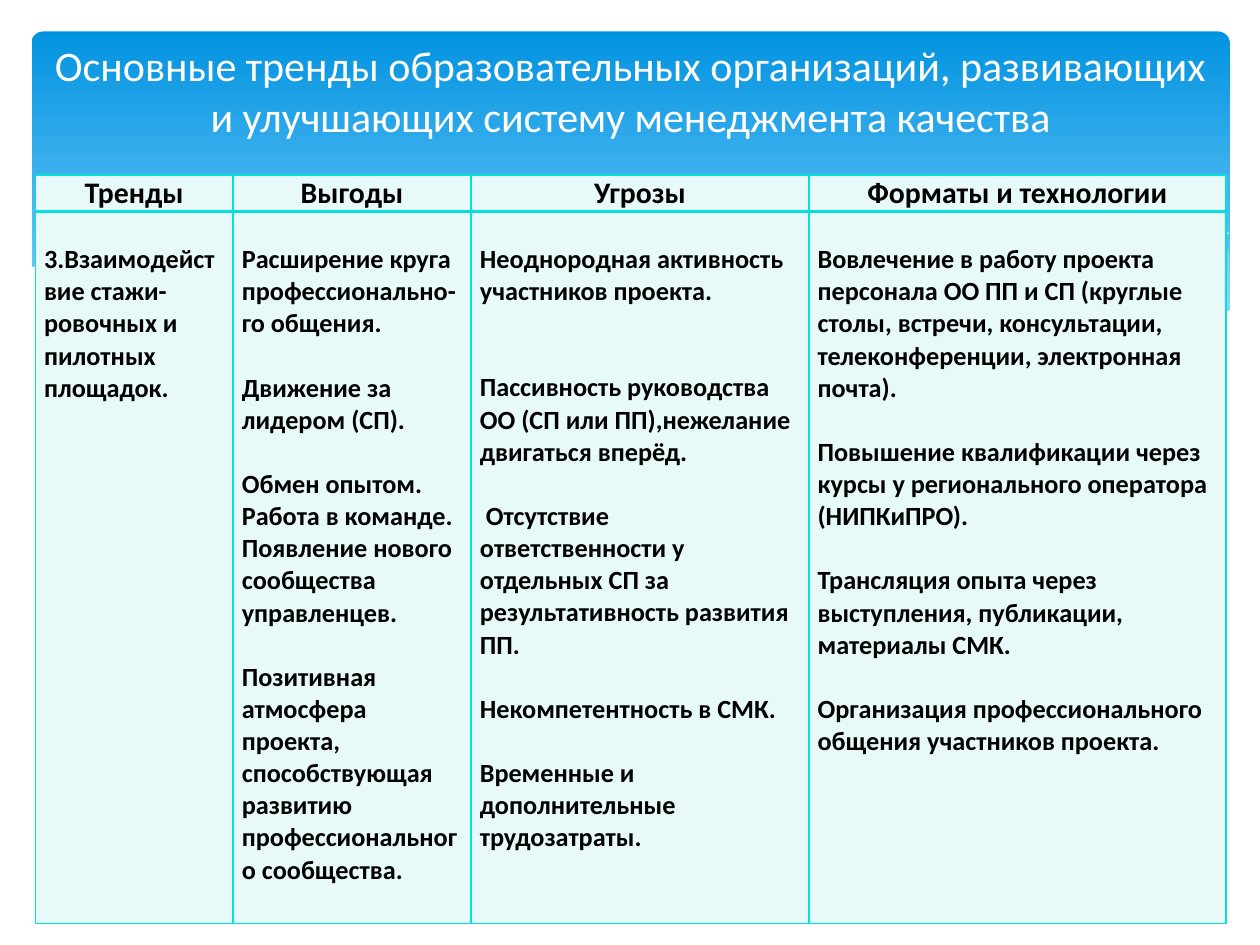
from dataclasses import dataclass

from lxml.etree import SubElement
from pptx import Presentation
from pptx.dml.color import RGBColor
from pptx.enum.shapes import MSO_SHAPE
from pptx.enum.text import MSO_ANCHOR, MSO_AUTO_SIZE, PP_ALIGN
from pptx.oxml import parse_xml
from pptx.oxml.ns import nsdecls, qn
from pptx.util import Inches, Pt


@dataclass(frozen=True)
class Theme:
    font: str = "Calibri"
    white: str = "FFFFFF"
    text: str = "000000"
    band_top: str = "0293E0"
    band_bottom: str = "83D3FE"
    wave: str = "C6E7FC"
    cell: str = "E7F9F8"
    border: str = "05E0DB"
    title_size: int = 24
    header_size: int = 17
    body_size: int = 15
    line_height: float = 18.3  # one body line, in points


THEME = Theme()

TITLE = ("Основные тренды образовательных организаций, развивающих "
         "и улучшающих систему менеджмента качества")
COL_WIDTHS = [1.57, 1.89, 2.68, 3.31]
ROW_HEIGHTS = [0.29, 5.65]
HEADERS = ["Тренды", "Выгоды", "Угрозы", "Форматы и технологии"]
# Each paragraph: free lines above it, text
BODY = [
    [(0, "3.Взаимодействие стажи-ровочных и пилотных площадок.")],
    [(0, "Расширение круга профессионально-"),
     (0, "го общения."),
     (1, "Движение за лидером (СП)."),
     (1, "Обмен опытом."),
     (0, "Работа в команде."),
     (0, "Появление нового сообщества управленцев."),
     (1, "Позитивная атмосфера проекта, способствующая развитию "
         "профессионального сообщества.")],
    [(0, "Неоднородная активность участников проекта."),
     (2, "Пассивность руководства ОО (СП или ПП),нежелание двигаться вперёд."),
     (1, " Отсутствие ответственности у отдельных СП за результативность "
         "развития ПП."),
     (1, "Некомпетентность в СМК."),
     (1, "Временные и дополнительные трудозатраты.")],
    [(0, "Вовлечение в работу проекта персонала ОО ПП и СП (круглые столы, "
         "встречи, консультации, телеконференции, электронная почта)."),
     (1, "Повышение квалификации через курсы у регионального оператора "
         "(НИПКиПРО)."),
     (1, "Трансляция опыта через выступления, публикации, материалы СМК."),
     (1, "Организация профессионального общения участников проекта.")],
]

# Wave outlines, in inches from the corner of the wave box
SMALL_WAVE = [(9.53, 0.16), (8.98, 0.26), (8.38, 0.39), (7.3, 0.64), (6.38, 0.81),
              (6.82, 0.87), (7.34, 0.92), (7.91, 0.94), (8.4, 0.91), (8.9, 0.83),
              (9.26, 0.73), (9.53, 0.63)]
WIDE_WAVE = [(8.7, 0.89), (7.84, 0.76), (6.83, 0.56), (6.06, 0.38), (5.46, 0.24),
             (4.91, 0.14), (4.19, 0.05), (3.38, 0.01), (2.63, 0.07), (3.39, 0.19),
             (4.26, 0.38), (5.07, 0.56), (5.95, 0.74), (6.72, 0.86), (7.5, 0.93),
             (8.05, 0.94)]
FALLING_LINE = [(2.86, 0.11), (3.4, 0.05), (4.1, 0.03), (4.87, 0.08), (5.59, 0.16),
                (6.42, 0.29), (7.37, 0.49), (8.08, 0.67), (8.84, 0.88)]
RISING_LINE = [(5.9, 0.73), (6.97, 0.45), (7.83, 0.26), (8.72, 0.1), (9.52, 0.01)]
WHITE_EDGE = [(9.54, 0.62), (9.07, 0.78), (8.52, 0.89), (7.86, 0.93), (7.03, 0.88),
              (6.03, 0.74), (5.06, 0.55), (4.24, 0.36), (3.42, 0.18), (2.69, 0.06),
              (2.07, 0.01), (1.54, 0), (0.96, 0.03), (0.44, 0.13), (0, 0.29),
              (0, 1.45), (9.54, 1.45)]


def rgb(color):
    return RGBColor.from_string(color)


def add_run(p, text, size, color, bold=False):
    r = p.add_run()
    r.text = text
    r.font.name = THEME.font
    r.font.size = Pt(size)
    r.font.bold = bold
    r.font.color.rgb = rgb(color)


def add_band(s, left, top, width, height):
    """Blue rounded panel behind the title."""
    sp = s.shapes.add_shape(MSO_SHAPE.ROUNDED_RECTANGLE, Inches(left), Inches(top),
                            Inches(width), Inches(height))
    sp.adjustments[0] = 0.034
    sp.shadow.inherit = False
    sp.line.fill.background()
    sp.fill.gradient()
    sp.fill.gradient_angle = 270
    stops = zip(sp.fill.gradient_stops, (0, 0.9), (THEME.band_top, THEME.band_bottom))
    for stop, position, color in stops:
        stop.position = position
        stop.color.rgb = rgb(color)


def add_outline(s, left, top, points, fill=None, opacity=100):
    """Filled wave, or a thin white line when no fill is given."""
    pts = [(Inches(left + x), Inches(top + y)) for x, y in points]
    builder = s.shapes.build_freeform(*pts[0])
    builder.add_line_segments(pts[1:], close=fill is not None)
    sp = builder.convert_to_shape()
    sp.shadow.inherit = False
    if fill is None:
        sp.fill.background()
        sp.line.color.rgb = rgb(THEME.white)
        sp.line.width = Pt(0)
        return
    sp.line.fill.background()
    sp.fill.solid()
    sp.fill.fore_color.rgb = rgb(fill)
    if opacity < 100:
        color = sp.fill._xPr.find(".//" + qn("a:srgbClr"))
        SubElement(color, qn("a:alpha"), val=str(opacity * 1000))


def add_waves(s, left, top):
    add_outline(s, left, top, SMALL_WAVE, THEME.wave, 29)
    add_outline(s, left, top, WIDE_WAVE, THEME.wave, 40)
    add_outline(s, left, top, FALLING_LINE)
    add_outline(s, left, top, RISING_LINE)
    add_outline(s, left, top, WHITE_EDGE, THEME.white)


def style_cell(cell, top_width, bottom_width):
    cell.margin_left = cell.margin_right = Inches(0.07)
    cell.margin_top = cell.margin_bottom = 0
    cell.fill.solid()
    cell.fill.fore_color.rgb = rgb(THEME.cell)
    sides = [("L", 1), ("R", 1), ("T", top_width), ("B", bottom_width)]
    for i, (side, width) in enumerate(sides):
        cell._tc.get_or_add_tcPr().insert(i, parse_xml(
            f'<a:ln{side} {nsdecls("a")} w="{Pt(width)}"><a:solidFill>'
            f'<a:srgbClr val="{THEME.border}"/></a:solidFill></a:ln{side}>'))


def add_trend_table(s, left, top):
    table = s.shapes.add_table(2, len(HEADERS), Inches(left), Inches(top),
                               Inches(sum(COL_WIDTHS)), Inches(sum(ROW_HEIGHTS))).table
    table.first_row = table.horz_banding = False
    for row, height in zip(table.rows, ROW_HEIGHTS):
        row.height = Inches(height)
    for i, (width, header, items) in enumerate(zip(COL_WIDTHS, HEADERS, BODY)):
        table.columns[i].width = Inches(width)
        # Header cell
        head = table.cell(0, i)
        style_cell(head, 1, 2)
        p = head.text_frame.paragraphs[0]
        p.alignment = PP_ALIGN.CENTER
        add_run(p, header, THEME.header_size, THEME.text, True)
        # Body cell, starting one line down
        body = table.cell(1, i)
        style_cell(body, 2, 1)
        body.margin_top = Pt(THEME.line_height)
        tf = body.text_frame
        for n, (gap, text) in enumerate(items):
            p = tf.add_paragraph() if n else tf.paragraphs[0]
            p.space_before = Pt(gap * THEME.line_height)
            add_run(p, text, THEME.body_size, THEME.text, True)


def place_title(s, left, top, width, height):
    sp = s.shapes.title
    sp.left, sp.top = Inches(left), Inches(top)
    sp.width, sp.height = Inches(width), Inches(height)
    tf = sp.text_frame
    tf.word_wrap = True
    tf.auto_size = MSO_AUTO_SIZE.NONE
    tf.vertical_anchor = MSO_ANCHOR.MIDDLE
    p = tf.paragraphs[0]
    p.alignment = PP_ALIGN.CENTER
    add_run(p, TITLE, THEME.title_size, THEME.white)
    sp._element.getparent().append(sp._element)  # bring to front


def main():
    prs = Presentation()
    prs.slide_width, prs.slide_height = Inches(10), Inches(7.5)
    s = prs.slides.add_slide(prs.slide_layouts[5])
    add_band(s, 0.25, 0.25, 9.51, 2.7)
    add_waves(s, 0.23, 1.84)
    add_trend_table(s, 0.28, 1.39)
    place_title(s, 0.28, 0.21, 9.45, 1.01)
    prs.save("out.pptx")


if __name__ == "__main__":
    main()
